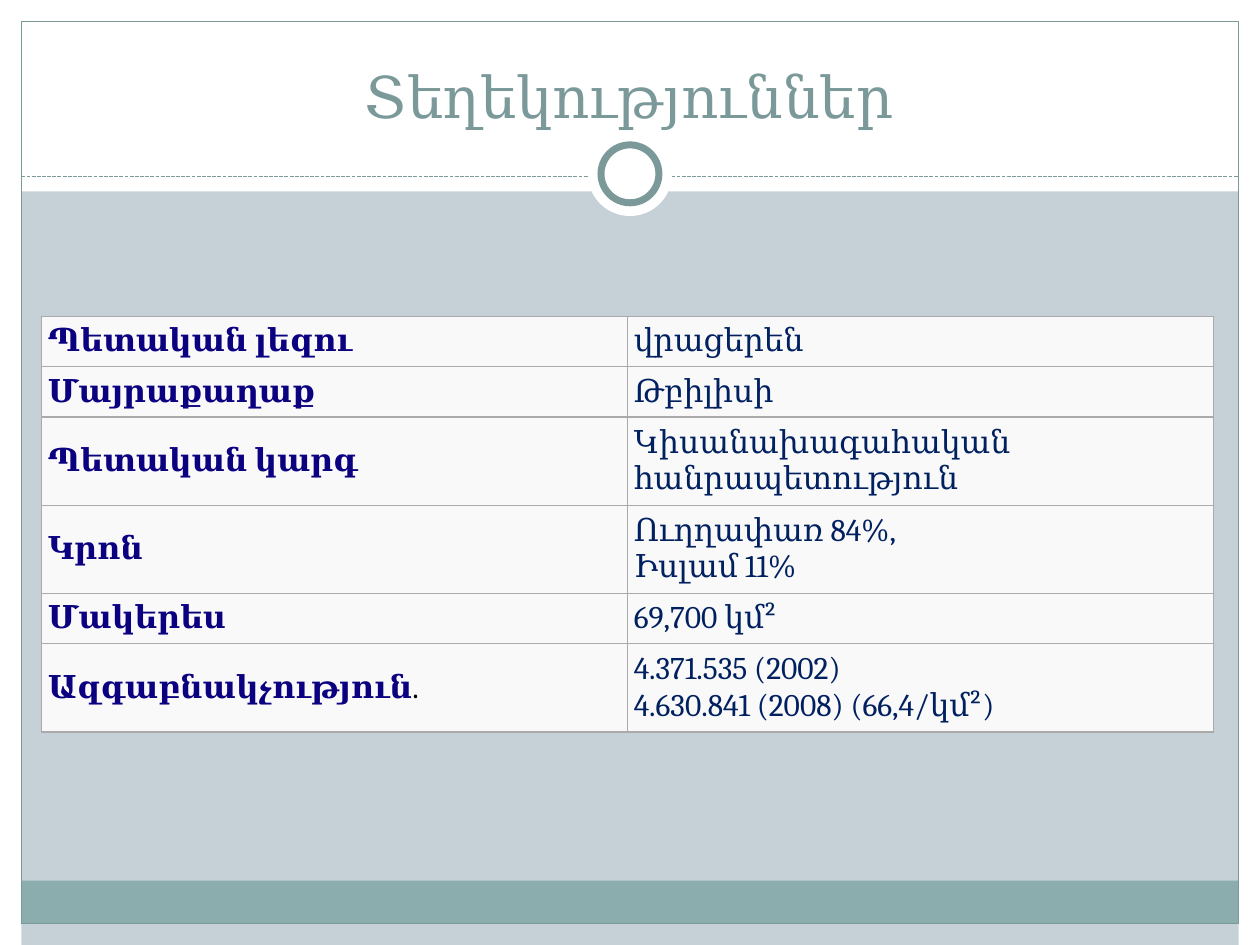
from dataclasses import dataclass

import pptx
import pptx.dml.color
import pptx.enum.dml
import pptx.enum.shapes
import pptx.enum.text
import pptx.oxml
import pptx.oxml.ns
import pptx.util

Inches = pptx.util.Inches
Pt = pptx.util.Pt
SHAPE = pptx.enum.shapes.MSO_SHAPE
ANCHOR = pptx.enum.text.MSO_ANCHOR


@dataclass(frozen=True)
class Theme:
    font: str = "Cambria"
    title_size: int = 33
    table_size: int = 18
    background: str = "C5D1D7"
    paper: str = "FFFFFF"
    accent: str = "7C999A"
    footer: str = "8CADAE"
    cell: str = "F9F9F9"
    grid: str = "AAAAAA"
    label: str = "0B0080"
    value: str = "002060"
    mark: str = "000000"


THEME = Theme()

FACTS = [
    ("Պետական լեզու", "վրացերեն"),
    ("Մայրաքաղաք", "Թբիլիսի"),
    ("Պետական կարգ", "Կիսանախագահական հանրապետություն"),
    ("Կրոն", "Ուղղափառ 84%,\nԻսլամ 11%"),
    ("Մակերես", "69,700 կմ²"),
    ("Ազգաբնակչություն", "4.371.535 (2002)\n4.630.841 (2008) (66,4/կմ²)"),
]
ROW_HEIGHTS = [0.4, 0.4, 0.7, 0.7, 0.4, 0.7]


def rgb(code):
    return pptx.dml.color.RGBColor.from_string(code)


def style_run(run, size, color, bold=False):
    run.font.name = THEME.font
    run.font.size = Pt(size)
    run.font.bold = bold
    run.font.color.rgb = rgb(color)


def add_plain(slide, kind, box, fill=None, line=None, width=0.75):
    shape = slide.shapes.add_shape(kind, *map(Inches, box))
    shape.shadow.inherit = False
    if fill:
        shape.fill.solid()
        shape.fill.fore_color.rgb = rgb(fill)
    else:
        shape.fill.background()
    if line:
        shape.line.color.rgb = rgb(line)
        shape.line.width = Pt(width)
    else:
        shape.line.fill.background()


def add_frame(slide, left, top, width, height):
    """White margins, footer band, outline and the dashed rule with its ring."""
    margin, header, rule = 0.17, 1.52, 1.4
    right, bottom = left + width, top + height
    inner = width - 2 * margin
    for box in [
        (left, top, width, header),
        (left, top, margin, height),
        (right - margin, top, margin, height),
    ]:
        add_plain(slide, SHAPE.RECTANGLE, box, THEME.paper)
    frame_bottom = bottom - margin
    add_plain(slide, SHAPE.RECTANGLE,
              (left + margin, frame_bottom - 0.34, inner, 0.34), THEME.footer)
    add_plain(slide, SHAPE.RECTANGLE,
              (left + margin, top + margin, inner, height - 2 * margin),
              line=THEME.accent)

    dashes = slide.shapes.add_connector(
        pptx.enum.shapes.MSO_CONNECTOR.STRAIGHT,
        Inches(left + margin), Inches(top + rule),
        Inches(right - margin), Inches(top + rule))
    dashes.line.color.rgb = rgb(THEME.accent)
    dashes.line.width = Pt(0.75)
    dashes.line.dash_style = pptx.enum.dml.MSO_LINE.SQUARE_DOT
    dashes.element.spPr.append(pptx.oxml.parse_xml(
        f"<a:effectLst {pptx.oxml.ns.nsdecls('a')}/>"))

    center_x, center_y = left + width / 2, top + 1.38
    for size, line in [(0.67, None), (0.46, THEME.accent)]:
        box = (center_x - size / 2, center_y - size / 2, size, size)
        add_plain(slide, SHAPE.OVAL, box, THEME.paper, line, 4)


def place_title(slide, left, top, width, height):
    title = slide.shapes.title
    title.left, title.top = Inches(left), Inches(top)
    title.width, title.height = Inches(width), Inches(height)
    title.text_frame.text = "Տեղեկություններ"
    title.text_frame.vertical_anchor = ANCHOR.BOTTOM
    heading = title.text_frame.paragraphs[0]
    heading.alignment = pptx.enum.text.PP_ALIGN.CENTER
    style_run(heading.runs[0], THEME.title_size, THEME.accent)
    # The title has to lie above the white header.
    title.element.getparent().append(title.element)


def add_borders(cell):
    properties = cell._tc.get_or_add_tcPr()
    for index, side in enumerate(("lnL", "lnR", "lnT", "lnB")):
        properties.insert(index, pptx.oxml.parse_xml(
            f'<a:{side} {pptx.oxml.ns.nsdecls("a")} w="{Pt(0.75)}">'
            f'<a:solidFill><a:srgbClr val="{THEME.grid}"/></a:solidFill>'
            f"</a:{side}>"))


def fill_cell(cell, text, color, bold):
    cell.fill.solid()
    cell.fill.fore_color.rgb = rgb(THEME.cell)
    cell.vertical_anchor = ANCHOR.MIDDLE
    cell.margin_left = cell.margin_right = Inches(0.05)
    cell.margin_top = cell.margin_bottom = Inches(0.05)
    add_borders(cell)
    paragraph = cell.text_frame.paragraphs[0]
    paragraph.text = text
    for run in paragraph.runs:
        style_run(run, THEME.table_size, color, bold)


def add_facts(slide, left, top, width):
    table = slide.shapes.add_table(
        len(FACTS), 2, Inches(left), Inches(top),
        Inches(width), Inches(sum(ROW_HEIGHTS))).table
    table.first_row = table.horz_banding = False
    for column in table.columns:
        column.width = Inches(width / 2)
    for row, height, (label, value) in zip(table.rows, ROW_HEIGHTS, FACTS):
        row.height = Inches(height)
        fill_cell(row.cells[0], label, THEME.label, True)
        fill_cell(row.cells[1], value, THEME.value, False)
    full_stop = table.cell(len(FACTS) - 1, 0).text_frame.paragraphs[0].add_run()
    full_stop.text = "."
    style_run(full_stop, THEME.table_size, THEME.mark)


def main():
    deck = pptx.Presentation()
    deck.slide_width, deck.slide_height = Inches(10), Inches(7.5)
    slide = deck.slides.add_slide(deck.slide_layouts.get_by_name("Title Only"))
    slide.background.fill.solid()
    slide.background.fill.fore_color.rgb = rgb(THEME.background)
    add_frame(slide, 0, 0, 10, 7.5)
    place_title(slide, 0.33, 0.25, 9.33, 0.83)
    add_facts(slide, 0.33, 2.51, 9.3)
    deck.save("out.pptx")


if __name__ == "__main__":
    main()
